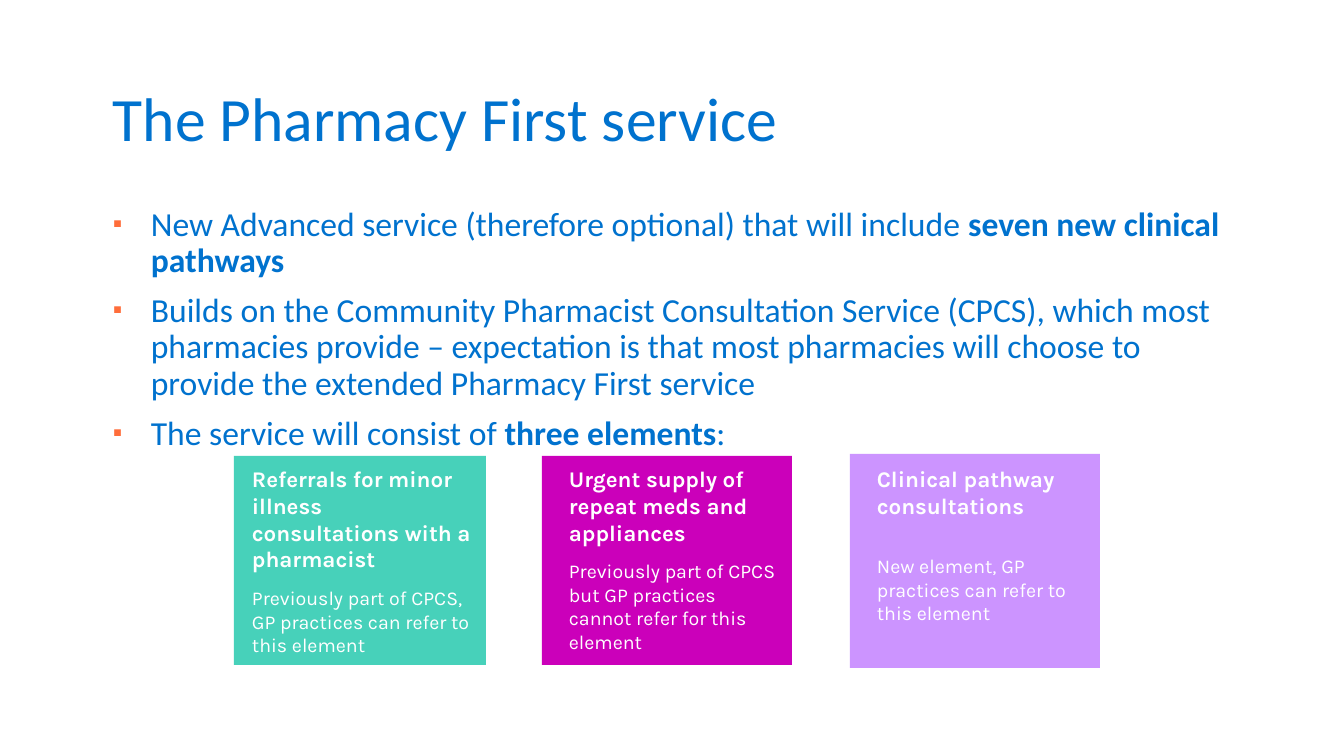
from pptx import Presentation
from pptx.dml.color import RGBColor
from pptx.enum.shapes import MSO_SHAPE as Shape
from pptx.enum.text import MSO_ANCHOR as Anchor
from pptx.oxml.ns import qn
from pptx.util import Pt
from lxml.etree import SubElement

BLUE = RGBColor(0x00, 0x72, 0xCE)
ORANGE = RGBColor(0xFF, 0x6D, 0x3A)
WHITE = RGBColor(0xFF, 0xFF, 0xFF)
TEAL = RGBColor(0x47, 0xD1, 0xBA)
MAGENTA = RGBColor(0xCB, 0x00, 0xBA)
LILAC = RGBColor(0xCC, 0x94, 0xFF)

# Content: each bullet is a list of (text, bold) spans
TITLE = "The Pharmacy First service"
BULLETS = [
    [("New Advanced service (therefore optional) that will include ", False),
     ("seven new clinical pathways", True)],
    [("Builds on the Community Pharmacist Consultation Service (CPCS), which most "
      "pharmacies provide – expectation is that most pharmacies will choose to "
      "provide the extended Pharmacy First service", False)],
    [("The service will consist of ", False), ("three elements", True), (":", False)],
]
# heading, detail, fill, (top, width, height), (text indent, text width), gap in points
ELEMENTS = [
    ("Referrals for minor illness consultations with a pharmacist",
     "Previously part of CPCS, GP practices can refer to this element",
     TEAL, (456, 252, 209), (8, 243), 9.6),
    ("Urgent supply of repeat meds and appliances",
     "Previously part of CPCS but GP practices cannot refer for this element",
     MAGENTA, (456, 250, 209), (17, 234), 9.6),
    ("Clinical pathway consultations",
     "New element, GP practices can refer to this element",
     LILAC, (454, 250, 214), (17, 234), 25.2),
]

# Layout in px
PAGE_WIDTH, PAGE_HEIGHT = 1344, 756
MARGIN, CONTENT_WIDTH = 103, 1148
CARD_LEFT, CARD_PITCH = 234, 308
CARD_TEXT_TOP, CARD_TEXT_HEIGHT = 460, 201
BULLET_INDENT = 38


def px(length):
    return round(length * 914400 / 100.8)


def add_bullet(para):
    props = para._p.get_or_add_pPr()
    props.set("marL", str(px(BULLET_INDENT)))
    props.set("indent", str(-px(BULLET_INDENT)))
    color = SubElement(props, qn("a:buClr"))
    SubElement(color, qn("a:srgbClr"), val=str(ORANGE))
    SubElement(props, qn("a:buSzPct"), val="80000")
    SubElement(props, qn("a:buFont"), typeface="Arial")
    SubElement(props, qn("a:buChar"), char="▪")


def add_text_box(left, top, width, height, anchor=Anchor.TOP):
    box = page.shapes.add_textbox(px(left), px(top), px(width), px(height))
    frame = box.text_frame
    frame.word_wrap = True
    frame.vertical_anchor = anchor
    return frame


def add_text(frame, spans, *, size, font, color, first=False, before=0, line=1.0,
             bullet=False):
    para = frame.paragraphs[0] if first else frame.add_paragraph()
    para.line_spacing = line
    para.space_before = Pt(0 if first else before)
    if bullet:
        add_bullet(para)
    for text, bold in spans:
        span = para.add_run()
        span.text = text
        span.font.name = font
        span.font.size = Pt(size)
        span.font.bold = bold
        span.font.color.rgb = color


deck = Presentation()
deck.slide_width, deck.slide_height = px(PAGE_WIDTH), px(PAGE_HEIGHT)
page = deck.slides.add_slide(deck.slide_layouts[6])

# Title
title = add_text_box(MARGIN, 40, CONTENT_WIDTH, 146, Anchor.MIDDLE)
add_text(title, [(TITLE, False)], size=44, font="Calibri", color=BLUE,
         first=True, line=1.1)

# Bullets
body = add_text_box(MARGIN, 202, CONTENT_WIDTH, 480)
for index, spans in enumerate(BULLETS):
    add_text(body, spans, size=24, font="Calibri", color=BLUE, first=index == 0,
             before=10, line=0.9, bullet=True)

# Three element cards
for index, (heading, detail, fill, card, text_area, gap) in enumerate(ELEMENTS):
    left = CARD_LEFT + index * CARD_PITCH
    top, width, height = card
    rect = page.shapes.add_shape(Shape.RECTANGLE, px(left), px(top), px(width), px(height))
    rect.shadow.inherit = False
    rect.fill.solid()
    rect.fill.fore_color.rgb = fill
    rect.line.fill.background()

    indent, text_width = text_area
    frame = add_text_box(left + indent, CARD_TEXT_TOP, text_width, CARD_TEXT_HEIGHT)
    add_text(frame, [(heading, True)], size=16, font="Karla", color=WHITE, first=True)
    add_text(frame, [(detail, False)], size=14, font="Karla", color=WHITE, before=gap)

deck.save("out.pptx")
